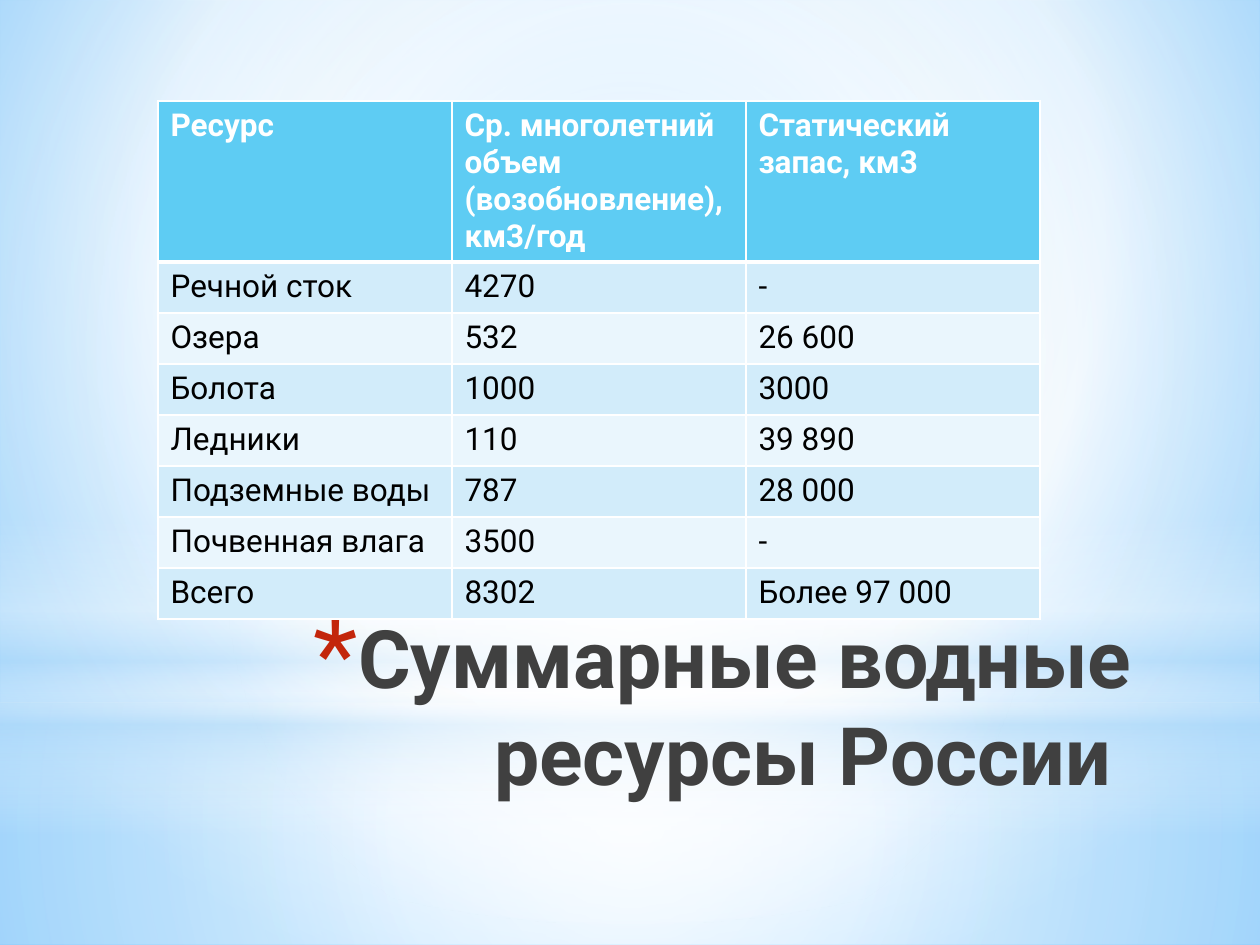
from lxml import etree
from pptx import Presentation
from pptx.dml.color import RGBColor
from pptx.enum.shapes import MSO_SHAPE
from pptx.enum.text import MSO_ANCHOR, MSO_AUTO_SIZE, PP_ALIGN
from pptx.oxml.ns import qn
from pptx.util import Pt

RECTANGLE = MSO_SHAPE.RECTANGLE
OVAL = MSO_SHAPE.OVAL
TOP = MSO_ANCHOR.TOP
RIGHT = PP_ALIGN.RIGHT
NO_AUTOFIT = MSO_AUTO_SIZE.NONE

EMU_PER_PX = 914400 / 126
TITLE_ONLY = 5
COLORS = {
    "white": "FFFFFF",
    "haze": "B4DCFA",
    "sky": "9ED5FF",
    "deep": "5BB9FF",
    "header": "5ECCF3",
    "odd": "D2ECFA",
    "even": "EAF6FD",
    "black": "000000",
    "title": "404040",
    "bullet": "C3260C",
}
CENTER = (50, 50, 50, 50)
BACKGROUND_STOPS = [(0, "sky", 100), (60, "white", 100), (100, "deep", 100)]
PANELS = [
    (RECTANGLE, (0, 703, 1260, 242),
     [(0, "white", 91), (37, "white", 76), (100, "haze", 79)], CENTER),
    (RECTANGLE, (0, 0, 1260, 703),
     [(0, "white", 89), (48, "white", 62), (100, "haze", 79)], CENTER),
    (RECTANGLE, (0, 519, 1260, 315),
     [(0, "white", 0), (29, "white", 30), (45, "haze", 40),
      (55, "white", 26), (65, "haze", 60), (100, "white", 0)], None),
    (OVAL, (0, 221, 1260, 703),
     [(0, "white", 100), (56, "white", 0)], CENTER),
]
ROWS = [
    ("Ресурс", "Ср. многолетний объем (возобновление), км3/год",
     "Статический запас, км3"),
    ("Речной сток", "4270", "-"),
    ("Озера", "532", "26 600"),
    ("Болота", "1000", "3000"),
    ("Ледники", "110", "39 890"),
    ("Подземные воды", "787", "28 000"),
    ("Почвенная влага", "3500", "-"),
    ("Всего", "8302", "Более 97 000"),
]


def px(value):
    return round(value * EMU_PER_PX)


def add_element(parent, tag, **attributes):
    return etree.SubElement(parent, qn(tag), attributes)


def add_color(parent, color, alpha=100):
    node = add_element(parent, "a:srgbClr", val=COLORS[color])
    if alpha < 100:
        add_element(node, "a:alpha", val=str(alpha * 1000))


def set_gradient(parent, stops, focus):
    gradient = etree.Element(qn("a:gradFill"), rotWithShape="1")
    stop_list = add_element(gradient, "a:gsLst")
    for position, color, alpha in stops:
        stop = add_element(stop_list, "a:gs", pos=str(position * 1000))
        add_color(stop, color, alpha)
    if focus:
        circle = add_element(gradient, "a:path", path="circle")
        edges = {side: str(part * 1000) for side, part in zip("ltrb", focus)}
        add_element(circle, "a:fillToRect", **edges)
    else:
        add_element(gradient, "a:lin", ang="5400000", scaled="0")
    parent.replace(parent.find(qn("a:solidFill")), gradient)


class SlideBuilder:
    font_name = "Roboto"

    def __init__(self, deck):
        self.page = deck.slides.add_slide(deck.slide_layouts[TITLE_ONLY])

    def style(self, font, size, color, bold):
        values = {"name": self.font_name, "size": Pt(size), "bold": bold}
        for name, value in values.items():
            setattr(font, name, value)
        font.color.rgb = RGBColor.from_string(COLORS[color])

    def background(self, stops, focus):
        self.page.background.fill.solid()
        properties = self.page.element.find(".//" + qn("p:bgPr"))
        set_gradient(properties, stops, focus)

    def panel(self, kind, place, stops, focus):
        shape = self.page.shapes.add_shape(kind, *map(px, place))
        shape.shadow.inherit = False
        shape.line.fill.background()
        shape.fill.solid()
        set_gradient(shape.element.spPr, stops, focus)

    def title(self, text, place):
        title = self.page.shapes.title
        for name, value in zip(("left", "top", "width", "height"), place):
            setattr(title, name, px(value))
        frame = title.text_frame
        frame.text = text
        settings = {"word_wrap": True, "auto_size": NO_AUTOFIT, "vertical_anchor": TOP}
        for name, value in settings.items():
            setattr(frame, name, value)
        para = frame.paragraphs[0]
        para.alignment = RIGHT
        properties = para._p.get_or_add_pPr()
        properties.set("marL", str(px(44)))
        properties.set("indent", str(px(-44)))
        add_color(add_element(properties, "a:buClr"), "bullet")
        add_element(properties, "a:buSzPct", val="128000")
        add_element(properties, "a:buFont", typeface=self.font_name)
        add_element(properties, "a:buChar", char="*")
        self.style(para.runs[0].font, 46, "title", True)
        self.page.shapes.element.append(title.element)

    def cell(self, cell, text, fill, color, bold, borders):
        properties = cell._tc.get_or_add_tcPr()
        for side, width in borders.items():
            line = add_element(properties, "a:ln" + side, w=str(Pt(width)))
            add_color(add_element(line, "a:solidFill"), "white")
        cell.fill.solid()
        cell.fill.fore_color.rgb = RGBColor.from_string(COLORS[fill])
        cell.text = text
        self.style(cell.text_frame.paragraphs[0].runs[0].font, 18, color, bold)

    def table(self, rows, place, header_height, row_height):
        frame = self.page.shapes.add_table(len(rows), len(rows[0]), *map(px, place))
        table = frame.table
        for row_index, row in enumerate(rows):
            header = row_index == 0
            table.rows[row_index].height = px(header_height if header else row_height)
            fill = "header" if header else "odd" if row_index % 2 else "even"
            color = "white" if header else "black"
            borders = {"L": 1, "R": 1, "T": 3 if row_index == 1 else 1,
                       "B": 3 if header else 1}
            for column, text in enumerate(row):
                self.cell(table.cell(row_index, column), text, fill, color,
                          header, borders)


def main():
    deck = Presentation()
    deck.slide_width, deck.slide_height = px(1260), px(945)
    builder = SlideBuilder(deck)
    builder.background(BACKGROUND_STOPS, (20, 10, 20, 60))
    for panel in PANELS:
        builder.panel(*panel)
    builder.title("Суммарные водные ресурсы России ", (247, 602, 897, 158))
    builder.table(ROWS, (158, 101, 882, 519), 161, 51)
    deck.save("out.pptx")


if __name__ == "__main__":
    main()
